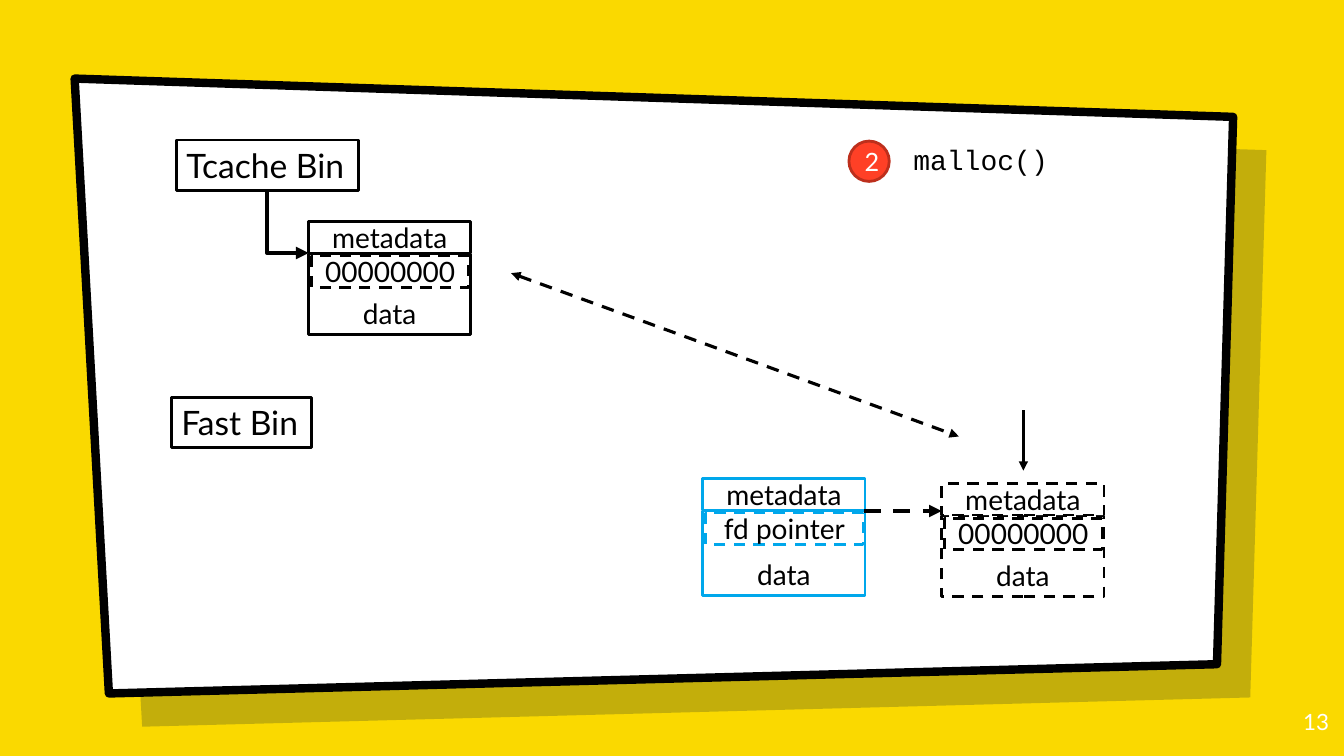
from dataclasses import dataclass

from pptx import Presentation
from pptx.dml.color import RGBColor
from pptx.enum.dml import MSO_LINE
from pptx.enum.shapes import MSO_CONNECTOR as LINK, MSO_SHAPE as SHAPE
from pptx.enum.text import MSO_ANCHOR as ANCHOR, MSO_AUTO_SIZE as FIT, PP_ALIGN as ALIGN
from pptx.oxml.ns import qn
from pptx.util import Inches, Pt
from lxml.etree import SubElement


@dataclass(frozen=True)
class Theme:
    """Colours, fonts and type sizes of the slide."""
    yellow: str = "FAD900"
    shade: str = "001936"
    black: str = "000000"
    white: str = "FFFFFF"
    blue: str = "00A7EB"
    red: str = "FF4026"
    dark_red: str = "BD2F1C"
    font: str = "Lato"
    code_font: str = "Courier New"
    bin_size: int = 24
    chunk_size: int = 20
    step_size: int = 18
    number_size: int = 16


THEME = Theme()
CHUNK_WIDTH = 1.61
HEADER_HEIGHT = 0.31


def colour(code):
    """Turn a hex code into a colour."""
    return RGBColor.from_string(code)


def style_line(line, code, width, dashed=False):
    """Set colour, width and dash of an outline."""
    line.color.rgb = colour(code)
    line.width = Pt(width)
    if dashed:
        line.dash_style = MSO_LINE.DASH


def write(shape, text, size, code=THEME.black, align=ALIGN.CENTER, anchor=ANCHOR.MIDDLE, font=THEME.font):
    """Put one formatted paragraph into a shape."""
    frame = shape.text_frame
    frame.word_wrap = True
    frame.vertical_anchor = anchor
    para = frame.paragraphs[0]
    para.text = text
    para.alignment = align
    para.font.name = font
    para.font.size = Pt(size)
    para.font.color.rgb = colour(code)
    return frame


def add_box(page, box, fill, line=None, dashed=False, kind=SHAPE.RECTANGLE):
    """Add a filled shape with an optional outline."""
    shape = page.shapes.add_shape(kind, *map(Inches, box))
    shape.shadow.inherit = False
    shape.fill.solid()
    shape.fill.fore_color.rgb = colour(fill)
    if line:
        style_line(shape.line, line, 2, dashed)
    else:
        shape.line.fill.background()
    return shape


def add_panel(page, left, top, fill):
    """Add the slanted panel with its corner at the given point."""
    corners = [(0, 0), (11.49, 0.38), (11.33, 5.81), (0.34, 6.1)]
    points = [(Inches(left + x), Inches(top + y)) for x, y in corners]
    builder = page.shapes.build_freeform(*points[0])
    builder.add_line_segments(points[1:], close=True)
    panel = builder.convert_to_shape()
    panel.shadow.inherit = False
    panel.fill.solid()
    panel.fill.fore_color.rgb = colour(fill)
    return panel


def add_backdrop(page):
    """Draw the yellow ground, the panel shadow and the panel."""
    page.background.fill.solid()
    page.background.fill.fore_color.rgb = colour(THEME.yellow)
    shade = add_panel(page, 1.07, 1.11, THEME.shade)
    shade.line.fill.background()
    tint = next(shade._element.spPr.iter(qn("a:srgbClr")))
    SubElement(tint, qn("a:alpha"), val="22000")
    style_line(add_panel(page, 0.74, 0.78, THEME.white).line, THEME.black, 6)


def add_page_number(page, box, text):
    """Write the page number in the lower corner."""
    number = page.shapes.add_textbox(*map(Inches, box))
    frame = write(number, text, THEME.number_size, THEME.white, ALIGN.RIGHT, ANCHOR.TOP)
    frame.margin_top = frame.margin_bottom = Inches(0.1)


def add_bin(page, box, name):
    """Add a bin label."""
    label = add_box(page, box, THEME.white, THEME.black)
    frame = write(label, name, THEME.bin_size, align=ALIGN.LEFT, anchor=ANCHOR.TOP)
    frame.word_wrap = False
    frame.auto_size = FIT.SHAPE_TO_FIT_TEXT


def add_chunk(page, left, top, data_height, pointer, line=THEME.black, dashed=False):
    """Stack the data, metadata and pointer cells of a heap chunk."""
    middle = top + HEADER_HEIGHT + 0.01
    cells = [
        ("data", (left, middle, CHUNK_WIDTH, data_height), ANCHOR.BOTTOM, dashed),
        ("metadata", (left, top, CHUNK_WIDTH, HEADER_HEIGHT), ANCHOR.MIDDLE, dashed),
        (pointer, (left + 0.03, middle + 0.02, 1.56, HEADER_HEIGHT), ANCHOR.MIDDLE, True),
    ]
    for text, box, anchor, cell_dashed in cells:
        cell = add_box(page, box, THEME.white, line, cell_dashed)
        write(cell, text, THEME.chunk_size, anchor=anchor)


def add_step(page, left, top, number, call):
    """Add a numbered disc and the call beside it."""
    disc = add_box(page, (left, top, 0.4, 0.4), THEME.red, THEME.dark_red, kind=SHAPE.OVAL)
    write(disc, number, THEME.step_size, THEME.white)
    label = add_box(page, (left + 0.54, top - 0.08, 2.7, 0.53), THEME.white)
    write(label, call, THEME.chunk_size, align=ALIGN.LEFT, font=THEME.code_font)


def add_arrow(page, start, end, width, dashed=False, both=False, kind=LINK.STRAIGHT):
    """Add an arrow with one or two heads."""
    arrow = page.shapes.add_connector(kind, *map(Inches, (*start, *end)))
    style_line(arrow.line, THEME.black, width, dashed)
    outline = arrow.line._get_or_add_ln()
    for tag in ("a:headEnd", "a:tailEnd") if both else ("a:tailEnd",):
        SubElement(outline, qn(tag), type="triangle")
    SubElement(arrow._element.spPr, qn("a:effectLst"))
    return arrow


def add_corner_arrow(page, start, end):
    """Add an arrow that runs down and then right, as a turned elbow."""
    across, down = end[0] - start[0], end[1] - start[1]
    middle_x, middle_y = start[0] + across / 2, start[1] + down / 2
    arrow = add_arrow(page, (middle_x + down / 2, middle_y - across / 2),
                      (middle_x - down / 2, middle_y + across / 2), 3, kind=LINK.ELBOW)
    properties = arrow._element.spPr
    properties.find(qn("a:xfrm")).set("rot", str(270 * 60000))
    properties.find(qn("a:prstGeom")).set("prst", "bentConnector2")


def add_heap_diagram(page):
    """Place the bins, chunks and arrows on the panel."""
    add_bin(page, (1.7, 3.94, 1.39, 0.5), "Fast Bin")
    add_chunk(page, 6.97, 4.75, 0.84, "fd pointer", THEME.blue)
    add_bin(page, (1.75, 1.39, 1.81, 0.5), "Tcache Bin")
    add_step(page, 8.42, 1.4, "2", "malloc()")
    add_corner_arrow(page, (2.65, 1.9), (3.06, 2.51))
    add_chunk(page, 3.06, 2.2, 0.8, "00000000")
    add_chunk(page, 9.34, 4.8, 0.8, "00000000", dashed=True)
    add_arrow(page, (10.15, 4.07), (10.15, 4.67), 2.25)
    add_arrow(page, (8.57, 5.07), (9.34, 5.07), 3, dashed=True)
    add_arrow(page, (5.07, 2.71), (9.51, 4.33), 2.25, dashed=True, both=True)


def main():
    """Build and save the deck."""
    deck = Presentation()
    deck.slide_width, deck.slide_height = Inches(13.33), Inches(7.5)
    page = deck.slides.add_slide(deck.slide_layouts[6])
    add_backdrop(page)
    add_page_number(page, (12.48, 6.93, 0.8, 0.57), "13")
    add_heap_diagram(page)
    deck.save("out.pptx")


if __name__ == "__main__":
    main()
